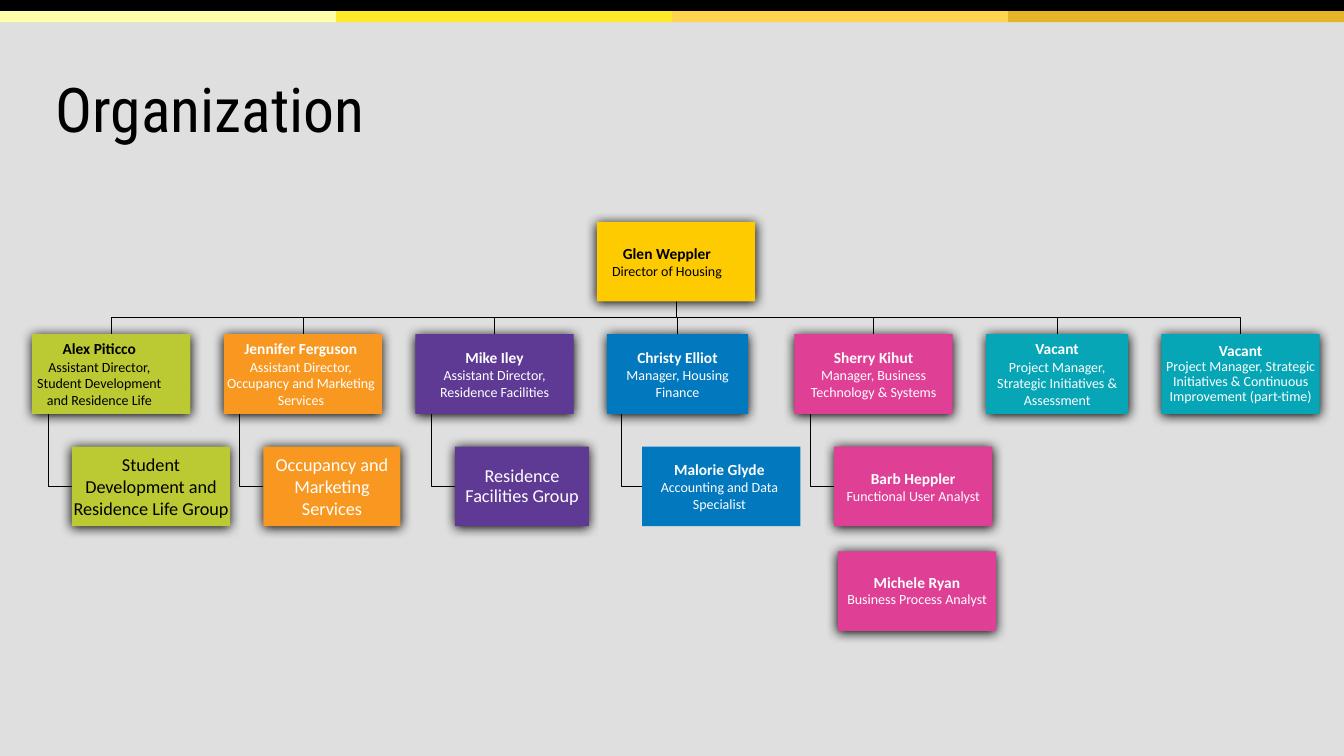
from typing import NamedTuple

from lxml.etree import SubElement
from pptx import Presentation
from pptx.dml.color import RGBColor
from pptx.enum.shapes import MSO_SHAPE
from pptx.enum.text import MSO_ANCHOR, MSO_AUTO_SIZE, PP_ALIGN
from pptx.oxml.ns import qn
from pptx.util import Inches, Pt

COLORS = {
    "background": "DFDFDF", "black": "000000", "white": "FFFFFF",
    "gold": "FECB00", "lime": "BBCA32", "orange": "F89820", "purple": "5F3A95",
    "blue": "0278BE", "pink": "E03F96", "teal": "06A6B7",
    "band 1": "FFFFAA", "band 2": "FFEA29", "band 3": "FFD54F", "band 4": "E4B429",
}
DARK_TEXT_FILLS = ("gold", "lime")
SLIDE_WIDTH, SLIDE_HEIGHT = 13.33, 7.5
CARD_WIDTH, CARD_HEIGHT, ROW_PITCH = 1.57, 0.79, 1.115


class Box(NamedTuple):
    left: float
    top: float
    width: float
    height: float

    @property
    def center(self):
        return self.left + self.width / 2

    @property
    def bottom(self):
        return self.top + self.height


class Card(NamedTuple):
    name: str
    role: str
    width: float = CARD_WIDTH
    spacing: float = 1.0
    name_indent: float = 0
    shadow: bool = True


# Offset from the chart's left edge, fill, manager, and the card below (if any)
BRANCHES = [
    (0, "lime",
     Card("Alex Piticco", "Assistant Director, Student Development and Residence Life",
          name_indent=0.24),
     Card("", "Student Development and Residence Life Group")),
    (1.9, "orange",
     Card("Jennifer Ferguson", "Assistant Director, Occupancy and Marketing Services",
          name_indent=0.04),
     Card("", "Occupancy and Marketing Services", 1.36)),
    (3.8, "purple",
     Card("Mike Iley", "Assistant Director, Residence Facilities"),
     Card("", "Residence Facilities Group", 1.33, 0.9)),
    (5.7, "blue",
     Card("Christy Elliot", "Manager, Housing Finance", 1.4),
     Card("Malorie Glyde", "Accounting and Data Specialist", name_indent=0.04,
          shadow=False)),
    (7.56, "pink",
     Card("Sherry Kihut", "Manager, Business Technology & Systems"),
     Card("Barb Heppler", "Functional User Analyst")),
    (9.46, "teal",
     Card("Vacant", "Project Manager, Strategic Initiatives & Assessment", 1.41), None),
    (11.2, "teal",
     Card("Vacant", "Project Manager, Strategic Initiatives & Continuous Improvement "
          "(part-time)", spacing=0.9), None),
]
DIRECTOR = Card("Glen Weppler", "Director of Housing", name_indent=0.18)
SECOND_ANALYST = Card("Michele Ryan", "Business Process Analyst", spacing=0.9)


def color(name):
    return RGBColor.from_string(COLORS[name])


def add_rectangle(slide, box, fill):
    shape = slide.shapes.add_shape(MSO_SHAPE.RECTANGLE, *map(Inches, box))
    shape.shadow.inherit = False
    shape.fill.solid()
    shape.fill.fore_color.rgb = color(fill)
    shape.line.fill.background()
    return shape


def add_glow(shape):
    """Give the shape a soft black shadow just below it."""
    effects = shape.element.spPr.find(qn("a:effectLst"))
    shadow = SubElement(effects, qn("a:outerShdw"), blurRad=str(Pt(8.5)),
                        dist=str(Pt(1)), dir="5400000", rotWithShape="0")
    SubElement(shadow, qn("a:srgbClr"), val=COLORS["black"])


def add_card(slide, box, fill, card):
    shape = add_rectangle(slide, box, fill)
    if card.shadow:
        add_glow(shape)
    frame = shape.text_frame
    frame.word_wrap = True
    frame.vertical_anchor = MSO_ANCHOR.MIDDLE
    frame.margin_left = frame.margin_right = Inches(0.01)
    frame.margin_top = frame.margin_bottom = Inches(0.01)
    if card.name:
        lines = [(card.name, 11, True), (card.role, 10, False)]
    else:
        lines = [(card.role, 13, False)]
    for index, (text, size, bold) in enumerate(lines):
        paragraph = frame.add_paragraph() if index else frame.paragraphs[0]
        paragraph.alignment = PP_ALIGN.CENTER
        paragraph.line_spacing = card.spacing
        if bold and card.name_indent:
            paragraph._p.get_or_add_pPr().set("marR", str(Inches(card.name_indent)))
        run = paragraph.add_run()
        run.text = text
        run.font.name = "Calibri"
        run.font.size = Pt(size)
        run.font.bold = bold
        run.font.color.rgb = color("black" if fill in DARK_TEXT_FILLS else "white")


def add_elbow(slide, points):
    """Draw an open thin line through the points."""
    start, *rest = [(Inches(x), Inches(y)) for x, y in points]
    builder = slide.shapes.build_freeform(*start)
    builder.add_line_segments(rest, close=False)
    line = builder.convert_to_shape()
    line.shadow.inherit = False
    line.fill.background()
    line.line.color.rgb = color("black")
    line.line.width = Pt(0.5)


def add_top_bands(slide, box):
    add_rectangle(slide, Box(box.left, box.top, box.width, 0.13), "black")
    band_width = box.width / 4
    for index in range(4):
        add_rectangle(slide, Box(box.left + index * band_width, box.bottom - 0.11,
                                 band_width, 0.11), f"band {index + 1}")


def add_title(slide, box):
    title = slide.shapes.title
    title.left, title.top, title.width, title.height = map(Inches, box)
    frame = title.text_frame
    frame.word_wrap = True
    frame.auto_size = MSO_AUTO_SIZE.NONE
    frame.vertical_anchor = MSO_ANCHOR.TOP
    paragraph = frame.paragraphs[0]
    paragraph.alignment = PP_ALIGN.LEFT
    paragraph.line_spacing = 0.9
    run = paragraph.add_run()
    run.text = "Organization"
    run.font.name = "Roboto Condensed"
    run.font.size = Pt(44)
    run.font.color.rgb = color("black")


def add_organization_chart(slide, box):
    director = Box(box.center - CARD_WIDTH / 2, box.top, CARD_WIDTH, CARD_HEIGHT)
    manager_top = box.top + ROW_PITCH
    trunk = (director.bottom + manager_top) / 2
    cards = [(director, "gold", DIRECTOR)]
    for offset, fill, manager, report in BRANCHES:
        place = Box(box.left + offset, manager_top, manager.width, CARD_HEIGHT)
        cards.append((place, fill, manager))
        add_elbow(slide, [(director.center, director.bottom), (director.center, trunk),
                          (place.center, trunk), (place.center, place.top)])
        if report:
            below = Box(place.left + place.width / 4, place.top + ROW_PITCH,
                        report.width, CARD_HEIGHT)
            cards.append((below, fill, report))
            stem, middle = place.left + place.width / 10, below.top + CARD_HEIGHT / 2
            add_elbow(slide, [(stem, place.bottom), (stem, middle), (below.left, middle)])
    cards.append((Box(box.left + 7.99, box.bottom - CARD_HEIGHT, CARD_WIDTH, CARD_HEIGHT),
                  "pink", SECOND_ANALYST))
    for place, fill, card in cards:
        add_card(slide, place, fill, card)


def main():
    presentation = Presentation()
    presentation.slide_width = Inches(SLIDE_WIDTH)
    presentation.slide_height = Inches(SLIDE_HEIGHT)
    slide = presentation.slides.add_slide(presentation.slide_layouts[5])
    slide.background.fill.solid()
    slide.background.fill.fore_color.rgb = color("background")
    add_top_bands(slide, Box(0, 0, SLIDE_WIDTH, 0.22))
    add_organization_chart(slide, Box(0.32, 2.2, 12.77, 4.06))
    add_title(slide, Box(0.45, 0.74, 11.5, 0.6))
    presentation.save("out.pptx")


if __name__ == "__main__":
    main()
